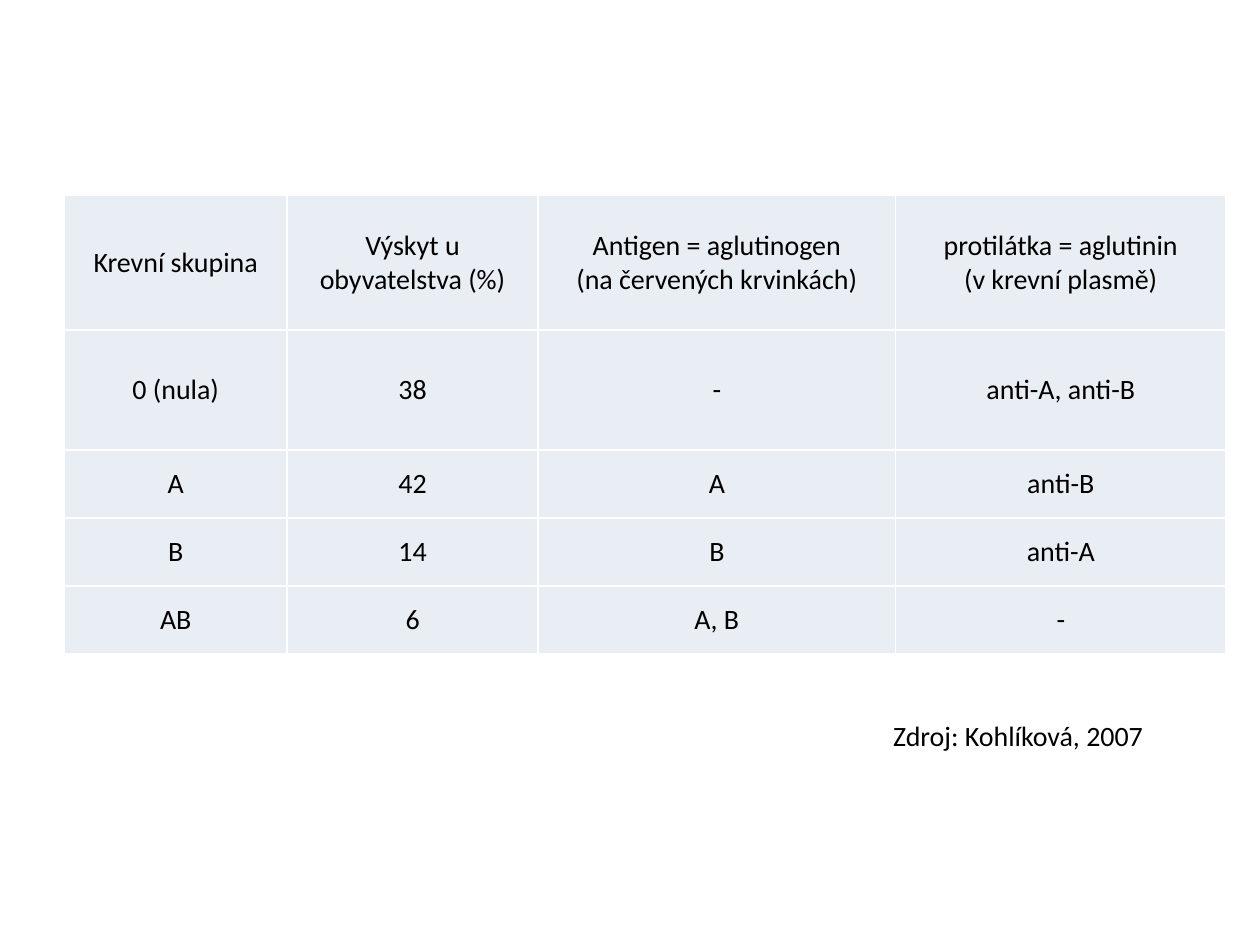
from lxml import etree
from pptx import Presentation
from pptx import util as u
from pptx.dml.color import RGBColor
from pptx.enum import text
from pptx.oxml.ns import qn

BLACK = RGBColor(0x00, 0x00, 0x00)
WHITE = RGBColor(0xFF, 0xFF, 0xFF)
PALE_BLUE = RGBColor(0xE9, 0xED, 0xF4)

COLUMNS = [1.77, 1.99, 2.84, 2.62]
ROWS = [1.07, 0.95, 0.54, 0.54, 0.54]
BLOOD_GROUPS = [
    ["Krevní skupina", "Výskyt u obyvatelstva (%)",
     "Antigen = aglutinogen\n(na červených krvinkách)",
     "protilátka = aglutinin\n(v krevní plasmě)"],
    ["0 (nula)", "38", "-", "anti-A, anti-B"],
    ["A", "42", "A", "anti-B"],
    ["B", "14", "B", "anti-A"],
    ["AB", "6", "A, B", "-"],
]
SPACED = {(0, 0)} | {(row, col) for row in (2, 3, 4) for col in (0, 2)}


def write_line(paragraph, words):
    paragraph.alignment = text.PP_ALIGN.CENTER
    run = paragraph.add_run()
    run.text = words
    run.font.size = u.Pt(16)
    run.font.name = "Calibri"
    run.font.color.rgb = BLACK


def add_borders(cell):
    properties = cell._tc.get_or_add_tcPr()
    for index, side in enumerate(("lnL", "lnR", "lnT", "lnB")):
        line = etree.Element(qn(f"a:{side}"), w=str(u.Pt(1)))
        fill = etree.SubElement(line, qn("a:solidFill"))
        etree.SubElement(fill, qn("a:srgbClr"), val=str(WHITE))
        properties.insert(index, line)


prs = Presentation()
prs.slide_width, prs.slide_height = u.Inches(10), u.Inches(7.5)
slide = prs.slides.add_slide(prs.slide_layouts[5])
slide.background.fill.solid()
slide.background.fill.fore_color.rgb = WHITE

citation = slide.shapes.title
citation.left, citation.top = u.Inches(6.65), u.Inches(5.64)
citation.width, citation.height = u.Inches(2.86), u.Inches(0.39)
citation.text_frame.vertical_anchor = text.MSO_ANCHOR.MIDDLE
citation.text_frame.auto_size = text.MSO_AUTO_SIZE.NONE
write_line(citation.text_frame.paragraphs[0], "Zdroj: Kohlíková, 2007")

groups = slide.shapes.add_table(
    len(ROWS), len(COLUMNS), u.Inches(0.51), u.Inches(1.55),
    u.Inches(sum(COLUMNS)), u.Inches(sum(ROWS))).table
groups.first_row = False
groups.horz_banding = False
for column, width in zip(groups.columns, COLUMNS):
    column.width = u.Inches(width)
for row, height in zip(groups.rows, ROWS):
    row.height = u.Inches(height)

for r, entries in enumerate(BLOOD_GROUPS):
    for c, entry in enumerate(entries):
        cell = groups.cell(r, c)
        cell.fill.solid()
        cell.fill.fore_color.rgb = PALE_BLUE
        cell.vertical_anchor = text.MSO_ANCHOR.MIDDLE
        cell.margin_left = cell.margin_right = u.Inches(0.05)
        cell.margin_top = cell.margin_bottom = 0
        add_borders(cell)
        for n, words in enumerate(entry.split("\n")):
            frame = cell.text_frame
            paragraph = frame.add_paragraph() if n else frame.paragraphs[0]
            write_line(paragraph, words)
            if (r, c) in SPACED:
                paragraph.space_before = u.Pt(12)
                paragraph.space_after = u.Pt(3)

prs.save("out.pptx")
